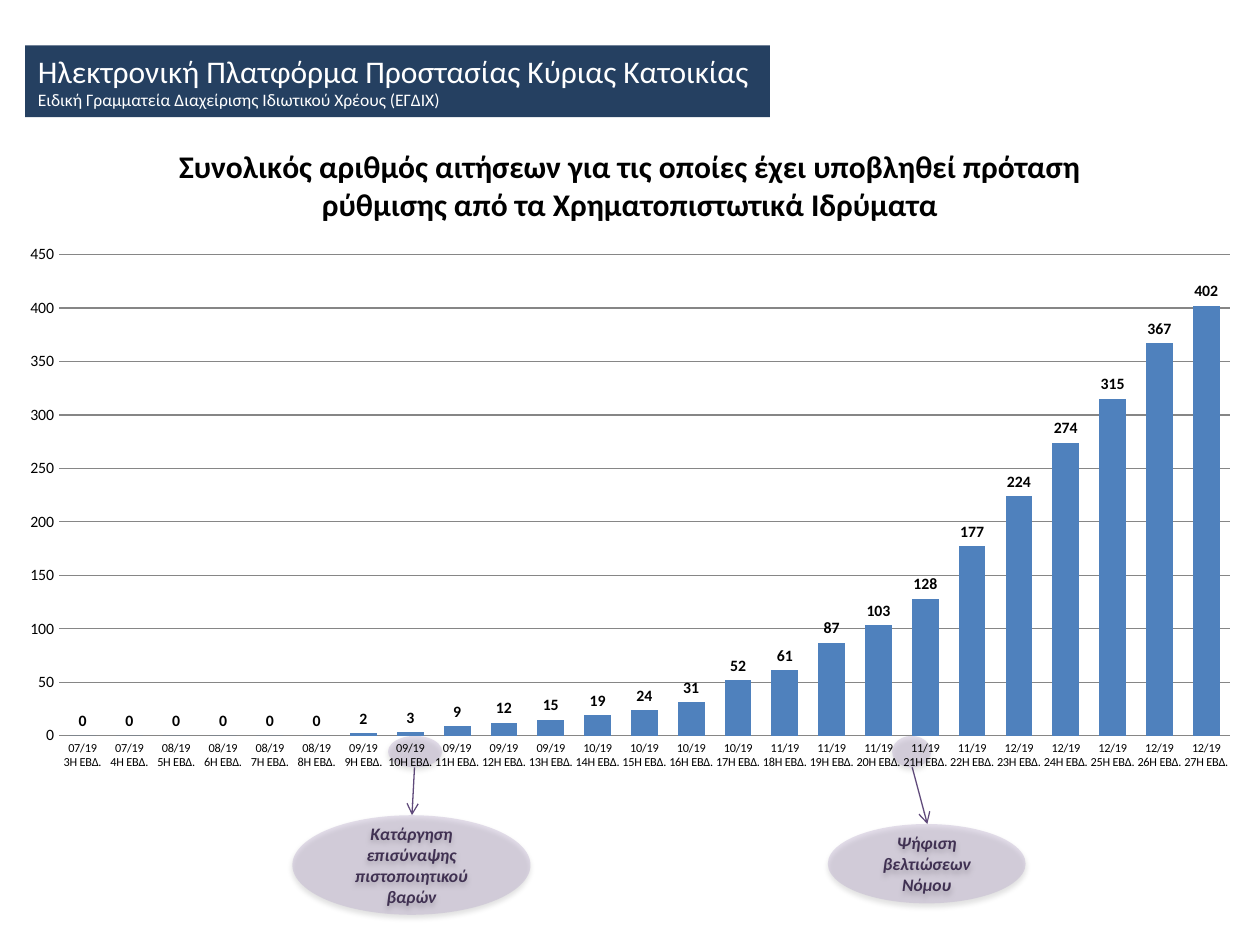
import pptx
import pptx.chart.data
import pptx.dml.color
import pptx.enum.chart
import pptx.enum.shapes
import pptx.enum.text
import pptx.oxml
import pptx.oxml.ns
import pptx.util
from pptx.util import Inches

COLORS = {"navy": "254061", "white": "FFFFFF", "black": "000000", "bar": "4F81BD",
          "grid": "868686", "lilac": "B3A2C7", "arrow": "604A7B", "plum": "403152"}
FONT = "Calibri"
CHART_TITLE = ("Συνολικός αριθμός αιτήσεων για τις οποίες έχει υποβληθεί πρόταση "
               "ρύθμισης από τα Χρηματοπιστωτικά Ιδρύματα")
MONTH_WEEKS = {"07/19": 2, "08/19": 4, "09/19": 5, "10/19": 4, "11/19": 5, "12/19": 5}
FIRST_WEEK = 3
VALUES = [0, 0, 0, 0, 0, 0, 2, 3, 9, 12, 15, 19, 24, 31, 52, 61, 87, 103, 128,
          177, 224, 274, 315, 367, 402]


def rgb(name):
    return pptx.dml.color.RGBColor.from_string(COLORS[name])


def xml(tag, attrs="", inner=""):
    ns = pptx.oxml.ns.nsdecls(tag.split(":")[0])
    return pptx.oxml.parse_xml(f"<{tag} {ns} {attrs}>{inner}</{tag}>")


def style(font, size, color="black", bold=False, italic=False):
    font.name, font.size = FONT, pptx.util.Pt(size)
    font.bold, font.italic = bold, italic
    font.color.rgb = rgb(color)


def place(sp, box):
    sp.left, sp.top, sp.width, sp.height = (Inches(v) for v in box)


def add_banner(s, box):
    sp = s.shapes.title
    place(sp, box)
    sp.fill.solid()
    sp.fill.fore_color.rgb = rgb("navy")
    tf = sp.text_frame
    tf.word_wrap = False
    tf.auto_size = pptx.enum.text.MSO_AUTO_SIZE.NONE
    tf.vertical_anchor = pptx.enum.text.MSO_ANCHOR.TOP
    lines = [("Ηλεκτρονική Πλατφόρμα Προστασίας Κύριας Κατοικίας", 18),
             ("Ειδική Γραμματεία Διαχείρισης Ιδιωτικού Χρέους (ΕΓΔΙΧ)", 10)]
    for i, (text, size) in enumerate(lines):
        p = tf.add_paragraph() if i else tf.paragraphs[0]
        p.alignment = pptx.enum.text.PP_ALIGN.LEFT
        p.space_before = pptx.util.Pt(0)
        r = p.add_run()
        r.text = text
        style(r.font, size, "white")


def add_ellipse(s, box):
    sp = s.shapes.add_shape(pptx.enum.shapes.MSO_SHAPE.OVAL, *(Inches(v) for v in box))
    sp.shadow.inherit = False
    sp.fill.solid()
    sp.fill.fore_color.rgb = rgb("lilac")
    sp.line.fill.background()
    # Translucent fill and soft shadow below
    sp.fill._xPr.find(".//" + pptx.oxml.ns.qn("a:srgbClr")).append(
        xml("a:alpha", 'val="34000"'))
    sp._element.spPr.find(pptx.oxml.ns.qn("a:effectLst")).append(xml(
        "a:outerShdw", 'blurRad="40000" dist="23000" dir="5400000" rotWithShape="0"',
        '<a:srgbClr val="000000"><a:alpha val="35000"/></a:srgbClr>'))
    return sp


def add_callout(s, marker, bubble, start, end, text):
    # Arrow from the marked week to its note
    ln = s.shapes.add_connector(pptx.enum.shapes.MSO_CONNECTOR.STRAIGHT,
                                *(Inches(v) for v in start + end))
    ln.line.color.rgb = rgb("arrow")
    ln.line.width = pptx.util.Pt(0.75)
    ln.line._get_or_add_ln().append(xml("a:tailEnd", 'type="arrow"'))
    ln._element.spPr.append(xml("a:effectLst"))

    add_ellipse(s, marker)
    tf = add_ellipse(s, bubble).text_frame
    tf.word_wrap = True
    tf.vertical_anchor = pptx.enum.text.MSO_ANCHOR.MIDDLE
    p = tf.paragraphs[0]
    p.alignment = pptx.enum.text.PP_ALIGN.CENTER
    r = p.add_run()
    r.text = text
    style(r.font, 10, "plum", bold=True, italic=True)


def add_weekly_chart(s, box):
    months = [m for m, n in MONTH_WEEKS.items() for _ in range(n)]
    data = pptx.chart.data.CategoryChartData(number_format="#,##0")
    data.categories = [f"{m}\n{w}Η ΕΒΔ." for w, m in enumerate(months, FIRST_WEEK)]
    data.add_series(CHART_TITLE, VALUES)
    chart = s.shapes.add_chart(pptx.enum.chart.XL_CHART_TYPE.COLUMN_CLUSTERED,
                               *(Inches(v) for v in box), data).chart
    style(chart.font, 9)
    chart.has_legend = False
    chart.has_title = True
    r = chart.chart_title.text_frame.paragraphs[0].add_run()
    r.text = CHART_TITLE
    style(r.font, 18, bold=True)

    # Bars and their labels
    plot = chart.plots[0]
    plot.gap_width = 75
    plot.vary_by_categories = False
    fill = plot.series[0].format.fill
    fill.solid()
    fill.fore_color.rgb = rgb("bar")
    plot.has_data_labels = True
    labels = plot.data_labels
    labels.show_value = True
    labels.number_format, labels.number_format_is_linked = "#,##0", False
    labels.position = pptx.enum.chart.XL_LABEL_POSITION.OUTSIDE_END
    style(labels.font, 9, bold=True)

    # Axes
    cat, val = chart.category_axis, chart.value_axis
    for axis, size in ((cat, 7), (val, 9)):
        axis.major_tick_mark = axis.minor_tick_mark = pptx.enum.chart.XL_TICK_MARK.NONE
        style(axis.tick_labels.font, size)
    cat.format.line.color.rgb = rgb("grid")
    val.format.line.fill.background()
    val.minimum_scale, val.maximum_scale, val.major_unit = 0, 450, 50
    val.tick_labels.number_format = "#,##0"
    val.tick_labels.number_format_is_linked = False
    val.has_major_gridlines = True
    val.major_gridlines.format.line.color.rgb = rgb("grid")
    val.major_gridlines.format.line.width = pptx.util.Pt(0.75)

    # Plot area as an inset of the chart box
    left, top, width, height = box
    inner = {"x": (0.47 - left) / width, "y": (2.02 - top) / height,
             "w": 9.29 / width, "h": 3.82 / height}
    area = chart._chartSpace.chart.plotArea
    for old in area.findall(pptx.oxml.ns.qn("c:layout")):
        area.remove(old)
    parts = '<c:layoutTarget val="inner"/><c:xMode val="edge"/><c:yMode val="edge"/>'
    parts += "".join(f'<c:{k} val="{v:.4f}"/>' for k, v in inner.items())
    area.insert(0, xml("c:layout", "", f"<c:manualLayout>{parts}</c:manualLayout>"))


def main():
    prs = pptx.Presentation()
    prs.slide_width, prs.slide_height = Inches(10), Inches(7.5)
    s = prs.slides.add_slide(prs.slide_layouts[5])
    add_banner(s, (0.2, 0.36, 5.91, 0.57))
    add_callout(s, (3.08, 5.84, 0.43, 0.25), (2.32, 6.47, 1.89, 0.79),
                (3.29, 6.09), (3.27, 6.47), "Κατάργηση επισύναψης πιστοποιητικού βαρών")
    add_callout(s, (7.08, 5.84, 0.31, 0.25), (6.57, 6.54, 1.57, 0.63),
                (7.24, 6.09), (7.36, 6.54), "Ψήφιση βελτιώσεων Νόμου")
    add_weekly_chart(s, (0.04, 0.94, 9.92, 5.28))
    prs.save("out.pptx")


if __name__ == "__main__":
    main()
